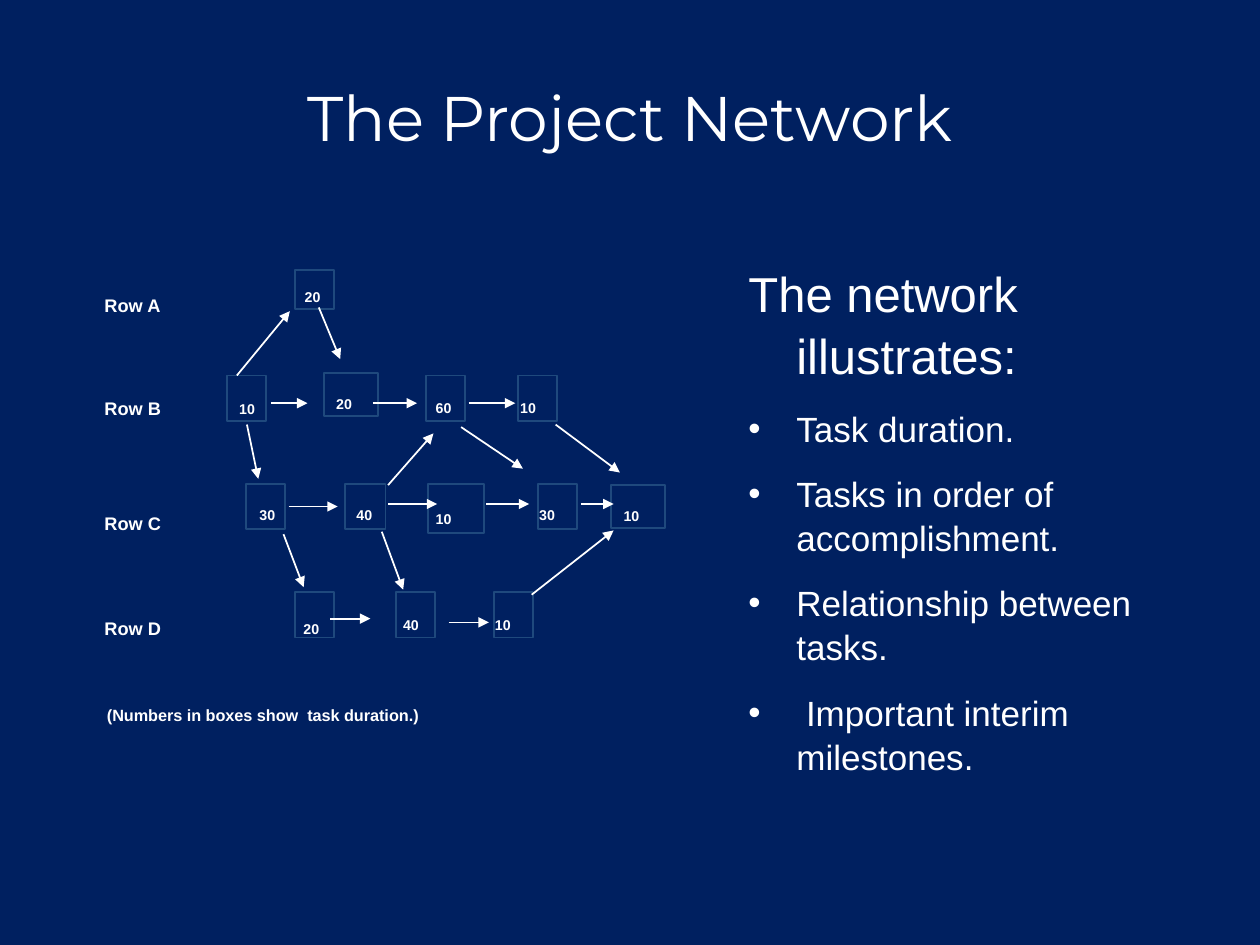
from lxml import etree
from pptx import Presentation
from pptx.dml.color import RGBColor
from pptx.enum.shapes import MSO_CONNECTOR, MSO_SHAPE
from pptx.enum.text import MSO_ANCHOR, MSO_AUTO_SIZE, PP_ALIGN
from pptx.oxml.ns import qn
from pptx.util import Inches, Pt

STRAIGHT = MSO_CONNECTOR.STRAIGHT
RECTANGLE = MSO_SHAPE.RECTANGLE
TOP, MIDDLE = MSO_ANCHOR.TOP, MSO_ANCHOR.MIDDLE
FIT_SHAPE, NO_FIT = MSO_AUTO_SIZE.SHAPE_TO_FIT_TEXT, MSO_AUTO_SIZE.NONE
LEFT, CENTER = PP_ALIGN.LEFT, PP_ALIGN.CENTER
NAVY, WHITE, STEEL = "002060", "FFFFFF", "1F497D"


def color(target, hex_value):
    target.rgb = RGBColor.from_string(hex_value)


def write(paragraph, text, size, font="Arial", align=LEFT, lowered=False,
          before=None, after=None):
    run = paragraph.add_run()
    run.text = text
    run.font.size = Pt(size)
    run.font.name = font
    color(run.font.color, WHITE)
    paragraph.alignment = align
    if lowered:
        run.font.bold = True
        run._r.get_or_add_rPr().set("baseline", "-25000")
    properties = paragraph._p.get_or_add_pPr()
    for tag, percent in (("a:spcBef", before), ("a:spcAft", after)):
        if percent:
            spacing = etree.SubElement(properties, qn(tag))
            etree.SubElement(spacing, qn("a:spcPct")).set("val", str(percent * 1000))


prs = Presentation()
prs.slide_width, prs.slide_height = Inches(10), Inches(7.5)
slide = prs.slides.add_slide(prs.slide_layouts[1])
slide.background.fill.solid()
color(slide.background.fill.fore_color, NAVY)

title, body = slide.placeholders
title.left, title.top = Inches(0.5), Inches(0.3)
title.width, title.height = Inches(9), Inches(1.25)
title.text_frame.vertical_anchor = MIDDLE
title.text_frame.auto_size = NO_FIT
write(title.text_frame.paragraphs[0], "The Project Network", 36, "Montserrat", CENTER)

body.left, body.top = Inches(5.84), Inches(2.02)
body.width, body.height = Inches(4), Inches(4.7)
body.text_frame.auto_size = NO_FIT
heading = body.text_frame.paragraphs[0]
heading.space_after = Pt(6)
write(heading, "The network illustrates:", 28)
for point in ("Task duration.", "Tasks in order of accomplishment.",
              "Relationship between tasks.", " Important interim milestones."):
    write(body.text_frame.add_paragraph(), point, 20, after=30)
for paragraph in body.text_frame.paragraphs:
    paragraph.space_before = Pt(6)
    paragraph.line_spacing = 1.05
    properties = paragraph._p.get_or_add_pPr()
    properties.set("marL", str(Inches(0.38)))
    properties.set("indent", str(-Inches(0.38)))
    if paragraph is heading or paragraph._p is heading._p:
        etree.SubElement(properties, qn("a:buNone"))
    else:
        etree.SubElement(properties, qn("a:buFont")).set("typeface", "Arial")
        etree.SubElement(properties, qn("a:buChar")).set("char", "•")

task_boxes = [
    (2.34, 2.14, 0.31, 0.31),
    (1.8, 2.98, 0.31, 0.36), (2.57, 2.96, 0.43, 0.34),
    (3.38, 2.98, 0.31, 0.36), (4.11, 2.98, 0.31, 0.36),
    (1.95, 3.84, 0.31, 0.36), (2.74, 3.84, 0.32, 0.36), (3.4, 3.84, 0.44, 0.39),
    (4.27, 3.84, 0.31, 0.36), (4.85, 3.85, 0.43, 0.34),
    (2.34, 4.7, 0.31, 0.36), (3.14, 4.7, 0.31, 0.36), (3.92, 4.7, 0.31, 0.36),
]
for x, y, width, height in task_boxes:
    task = slide.shapes.add_shape(RECTANGLE, Inches(x), Inches(y), Inches(width), Inches(height))
    task.shadow.inherit = False
    task.fill.background()
    color(task.line.color, STEEL)
    task.line.width = Pt(1)

dependencies = [
    (1.88, 2.98, 2.3, 2.47), (2.53, 2.44, 2.7, 2.85),
    (2.15, 3.2, 2.44, 3.2), (2.96, 3.2, 3.31, 3.2), (3.72, 3.2, 4.09, 3.2),
    (1.96, 3.37, 2.05, 3.8), (3.08, 3.85, 3.44, 3.44),
    (3.66, 3.39, 4.15, 3.72), (4.41, 3.37, 4.92, 3.75),
    (2.29, 4.02, 2.68, 4.02), (3.08, 4, 3.47, 4), (3.86, 4, 4.2, 4), (4.61, 4, 4.87, 4),
    (2.25, 4.24, 2.41, 4.66), (3.03, 4.22, 3.2, 4.68), (4.22, 4.72, 4.87, 4.21),
    (2.62, 4.91, 2.94, 4.91), (3.56, 4.94, 3.88, 4.94),
]
for ends in dependencies:
    arrow = slide.shapes.add_connector(STRAIGHT, *map(Inches, ends))
    color(arrow.line.color, WHITE)
    arrow.line.width = Pt(1)
    arrow_properties = arrow._element.spPr
    etree.SubElement(arrow_properties.find(qn("a:ln")), qn("a:tailEnd")).set("type", "triangle")
    etree.SubElement(arrow_properties, qn("a:effectLst"))

durations = [
    ("20", 2.32, 2.11),
    ("10", 1.8, 3), ("20", 2.57, 2.96), ("60", 3.36, 2.99), ("10", 4.03, 2.99),
    ("30", 1.96, 3.84), ("40", 2.73, 3.84), ("10", 3.36, 3.87),
    ("30", 4.18, 3.84), ("10", 4.85, 3.85),
    ("20", 2.31, 4.74), ("40", 3.1, 4.71), ("10", 3.83, 4.71),
]
labels = [(text, x, y, 0.42, 0.33, 14) for text, x, y in durations]
labels += [(f"Row {row}", 0.73, y, 0.72, 0.3, 18)
           for row, y in zip("ABCD", (2.12, 2.94, 3.85, 4.68))]
labels.append(("(Numbers in boxes show  task duration.)", 0.75, 5.4, 4.18, 0.36, 16))
for text, x, y, width, height, size in labels:
    label = slide.shapes.add_textbox(Inches(x), Inches(y), Inches(width), Inches(height))
    label.text_frame.word_wrap = False
    label.text_frame.auto_size = FIT_SHAPE
    label.text_frame.vertical_anchor = TOP
    write(label.text_frame.paragraphs[0], text, size, lowered=True, before=50)

prs.save("out.pptx")
